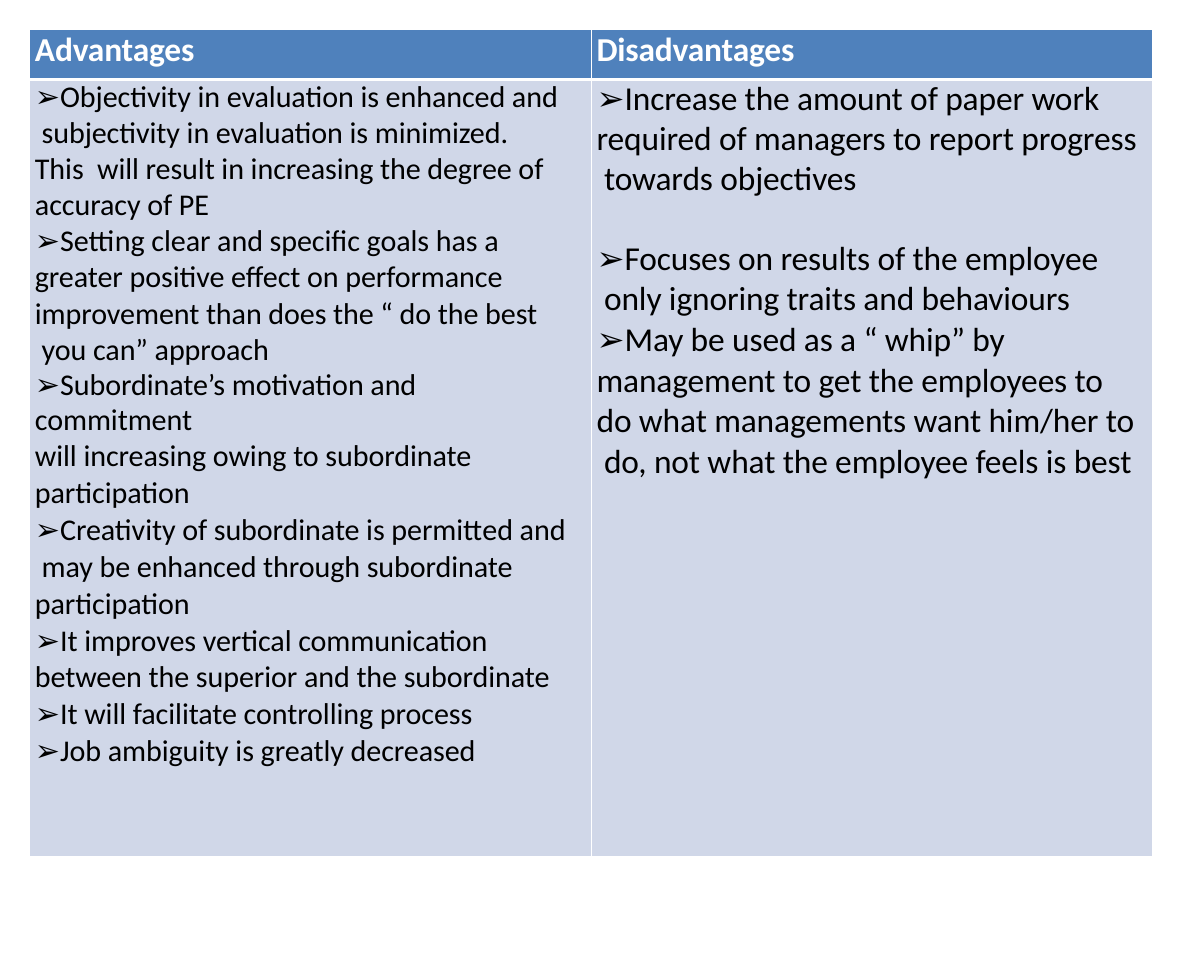
from lxml.etree import SubElement
from pptx import Presentation
from pptx.dml.color import RGBColor as RGB
from pptx.oxml.ns import qn
from pptx.util import Inches, Pt

COLORS = {"head": "4F81BC", "body": "D0D7E8", "line": "FFFFFF",
          "title": "FFFFFF", "text": "000000"}
MARK = "➢"

# Each point: text, right indent in inches, exact line height, space before
PROS = [
    (MARK + "Objectivity in evaluation is enhanced and  subjectivity in evaluation "
     "is minimized. This  will result in increasing the degree of  accuracy of PE",
     0.48, 43.2, 0),
    (MARK + "Setting clear and specific goals has a  greater positive effect on "
     "performance  improvement than does the “ do the best  you can” approach",
     0.83, 43.2, 0),
    (MARK + "Subordinate’s motivation and commitment", 0.6, 41.8, 0),
    ("will increasing owing to subordinate", 0, None, 0),
    ("participation", 0, None, 0),
    (MARK + "Creativity of subordinate is permitted and  may be enhanced through "
     "subordinate  participation", 0.37, None, 0),
    (MARK + "It improves vertical communication", 0, None, 0),
    ("between the superior and the subordinate", 0, None, 0),
    (MARK + "It will facilitate controlling process", 0, None, 0),
    (MARK + "Job ambiguity is greatly decreased", 0, None, 0),
]
CONS = [
    (MARK + "Increase the amount of paper work  required of managers to report "
     "progress  towards objectives", 0.22, 48, 0),
    (MARK + "Focuses on results of the employee  only ignoring traits and behaviours",
     0.84, None, 46),
    (MARK + "May be used as a “ whip” by  management to get the employees to  "
     "do what managements want him/her to  do, not what the employee feels is best",
     0.24, None, 0),
]


def add_run(para, text, size, color, font="Calibri", bold=False, track=-0.1):
    run = para.add_run()
    run.text = text
    run.font.name = font
    run.font.size = Pt(size)
    run.font.bold = bold
    run.font.color.rgb = RGB.from_string(COLORS[color])
    run.font._element.set("spc", str(round(track * 100)))


def indent(para, right=0):
    props = para._p.get_or_add_pPr()
    props.set("marL", str(Inches(0.09)))
    props.set("marR", str(Inches(right)))
    props.set("indent", "0")


def style_cell(cell, fill, top, bottom):
    """Set zero margins, white borders (widths in points) and the fill."""
    cell.margin_left = cell.margin_right = 0
    cell.margin_top = cell.margin_bottom = 0
    props = cell._tc.get_or_add_tcPr()
    for side, width in (("L", 1), ("R", 1), ("T", top), ("B", bottom)):
        line = SubElement(props, qn("a:ln" + side), w=str(Pt(width)))
        solid = SubElement(line, qn("a:solidFill"))
        SubElement(solid, qn("a:srgbClr"), val=COLORS["line"])
    cell.fill.solid()
    cell.fill.fore_color.rgb = RGB.from_string(COLORS[fill])


def fill_head(cell, title):
    style_cell(cell, "head", 1, 3)
    para = cell.text_frame.paragraphs[0]
    indent(para)
    add_run(para, title, 40, "title", bold=True, track=-0.2)


def fill_body(cell, points, size, track):
    style_cell(cell, "body", 3, 1)
    frame = cell.text_frame
    for i, (text, right, height, before) in enumerate(points):
        para = frame.add_paragraph() if i else frame.paragraphs[0]
        indent(para, right)
        if height:
            para.line_spacing = Pt(height)
        if before:
            para.space_before = Pt(before)
        if text.startswith(MARK):
            add_run(para, MARK, size, "text", font="Arial")
        add_run(para, text.removeprefix(MARK), size, "text", track=track)


def add_grid(slide):
    shape = slide.shapes.add_table(2, 2, Inches(0.49), Inches(0.49),
                                   Inches(18.66), Inches(13.73))
    table = shape.table
    table.horz_banding = False
    for row, height in zip(table.rows, (0.83, 12.9)):
        row.height = Inches(height)
    sides = (("Advantages", PROS, 36, -0.1), ("Disadvantages", CONS, 40, -0.15))
    for col, (title, points, size, track) in enumerate(sides):
        table.columns[col].width = Inches(9.33)
        fill_head(table.cell(0, col), title)
        fill_body(table.cell(1, col), points, size, track)


def main():
    deck = Presentation()
    deck.slide_width = Inches(20)
    deck.slide_height = Inches(16)
    add_grid(deck.slides.add_slide(deck.slide_layouts[6]))
    deck.save("out.pptx")


if __name__ == "__main__":
    main()
